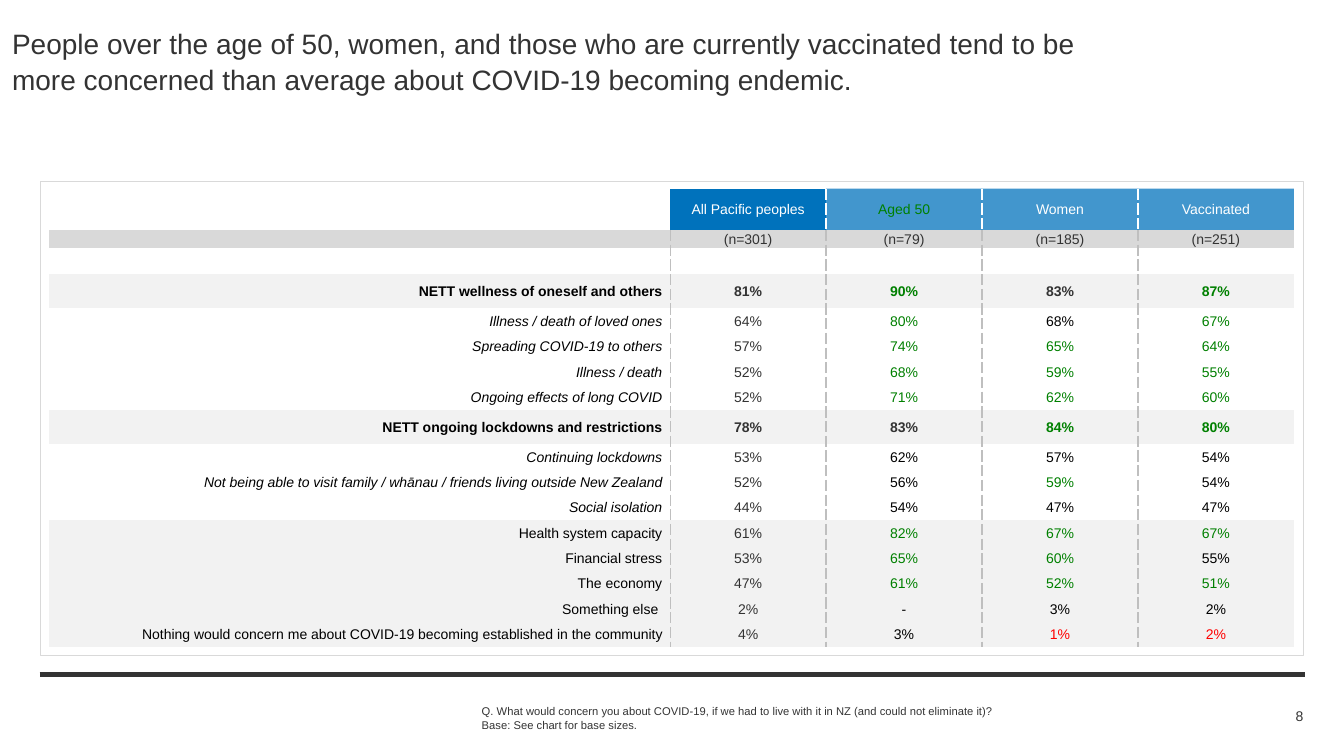
import lxml.etree
import pptx
import pptx.dml.color
import pptx.enum.shapes
import pptx.enum.text
import pptx.oxml.ns
import pptx.util

Pt = pptx.util.Pt
qn = pptx.oxml.ns.qn
ALIGN = pptx.enum.text.PP_ALIGN
ANCHOR = pptx.enum.text.MSO_ANCHOR

TITLE = ("People over the age of 50, women, and those who are currently vaccinated "
         "tend to be more concerned than average about COVID-19 becoming endemic.")
NOTES = [
    "Q. What would concern you about COVID-19, if we had to live with it in NZ (and could not eliminate it)?",
    "Base: See chart for base sizes.",
]
PAGE = "8"
DARK, BLACK, WHITE = "333333", "000000", "FFFFFF"
BLUE, GREY, PALE, DASH = "0072BC", "D9D9D9", "F2F2F2", "BFBFBF"
SIGNALS = {"+": "008000", "!": "FF0000"}

ROWS = [
    ("head", "", "All Pacific peoples", "Aged 50+", "Women", "Vaccinated"),
    ("base", "", "(n=301)", "(n=79)", "(n=185)", "(n=251)"),
    ("gap", "", "", "", "", ""),
    ("nett", "NETT wellness of oneself and others", "81%", "90%+", "83%", "87%+"),
    ("part", "Illness / death of loved ones", "64%", "80%+", "68%", "67%+"),
    ("part", "Spreading COVID-19 to others", "57%", "74%+", "65%+", "64%+"),
    ("part", "Illness / death", "52%", "68%+", "59%+", "55%+"),
    ("part", "Ongoing effects of long COVID", "52%", "71%+", "62%+", "60%+"),
    ("nett", "NETT ongoing lockdowns and restrictions", "78%", "83%", "84%+", "80%+"),
    ("part", "Continuing lockdowns", "53%", "62%", "57%", "54%"),
    ("part", "Not being able to visit family / whānau / friends living outside New Zealand",
     "52%", "56%", "59%+", "54%"),
    ("part", "Social isolation", "44%", "54%", "47%", "47%"),
    ("single", "Health system capacity", "61%", "82%+", "67%+", "67%+"),
    ("single", "Financial stress", "53%", "65%+", "60%+", "55%"),
    ("single", "The economy", "47%", "61%+", "52%+", "51%+"),
    ("single", "Something else ", "2%", "-", "3%", "2%"),
    ("single", "Nothing would concern me about COVID-19 becoming established in the community",
     "4%", "3%", "1%!", "2%!"),
]
HEIGHTS = {"head": 29.5, "base": 13, "gap": 18.5, "nett": 24.6, "part": 18.1, "single": 18.1}
FILLS = {"head": BLUE, "base": GREY, "nett": PALE, "single": PALE}
WIDTHS = [443.5] + [111.4] * 4


def rgb(value):
    return pptx.dml.color.RGBColor.from_string(value)


def style(p, size, color, align=ALIGN.LEFT, bold=False, italic=False):
    p.alignment = align
    for r in p.runs:
        r.font.name = "Arial"
        r.font.size = Pt(size)
        r.font.bold = bold
        r.font.italic = italic
        r.font.color.rgb = rgb(color)


def text_box(s, x, y, w, h):
    tf = s.shapes.add_textbox(Pt(x), Pt(y), Pt(w), Pt(h)).text_frame
    tf.word_wrap = True
    return tf


def no_margins(tf):
    tf.margin_left = tf.margin_right = tf.margin_top = tf.margin_bottom = 0


def border(cell, tag, color):
    ln = lxml.etree.SubElement(cell._tc.get_or_add_tcPr(), qn("a:" + tag), w=str(Pt(1)))
    fill = lxml.etree.SubElement(ln, qn("a:solidFill"))
    lxml.etree.SubElement(fill, qn("a:srgbClr"), val=color)
    lxml.etree.SubElement(ln, qn("a:prstDash"), val="dash")


def edge_color(kind, edge):
    if edge in (0, len(WIDTHS)) or (kind == "head" and edge == 1):
        return None
    return WHITE if kind == "head" else DASH


def text_color(kind, col, mark):
    if mark:
        return SIGNALS[mark]
    if kind == "head":
        return WHITE
    if col and (col == 1 or kind in ("base", "nett")):
        return DARK
    return BLACK


def fill_cell(cell, kind, col, text):
    for tag, edge in (("lnL", col), ("lnR", col + 1)):
        color = edge_color(kind, edge)
        if color:
            border(cell, tag, color)
    if kind in FILLS and not (kind == "head" and col == 0):
        cell.fill.solid()
        cell.fill.fore_color.rgb = rgb(FILLS[kind])
        if kind == "head" and col > 1:
            clr = cell._tc.tcPr.find(".//" + qn("a:solidFill") + "[last()]/" + qn("a:srgbClr"))
            clr = cell._tc.tcPr.find(qn("a:solidFill")).find(qn("a:srgbClr"))
            lxml.etree.SubElement(clr, qn("a:alpha"), val="74000")
    else:
        cell.fill.background()
    cell.vertical_anchor = ANCHOR.MIDDLE
    cell.margin_left = Pt(5.76 if kind == "head" else 0.72)
    cell.margin_right = Pt(5.76 if kind == "head" or col == 0 else 0.72)
    cell.margin_top, cell.margin_bottom = Pt(0.72), 0
    p = cell.text_frame.paragraphs[0]
    if not text:
        lxml.etree.SubElement(p._p, qn("a:endParaRPr"), sz="1000")
        return
    mark = text[-1] if text[-1] in SIGNALS and col else ""
    p.text = text.rstrip(mark) if mark else text
    style(p, 10, text_color(kind, col, mark), ALIGN.CENTER if col else ALIGN.RIGHT,
          kind == "nett", kind == "part" and col == 0)


def add_concerns(s):
    frame = s.shapes.add_table(len(ROWS), len(WIDTHS), Pt(35.2), Pt(134.8),
                               Pt(sum(WIDTHS)), Pt(sum(HEIGHTS[row[0]] for row in ROWS)))
    tbl = frame.table
    tbl.first_row = tbl.horz_banding = False
    tbl._tbl.tblPr.find(qn("a:tableStyleId")).text = "{2D5ABB26-0587-4C30-8999-92F81FD0307C}"
    for column, width in zip(tbl.columns, WIDTHS):
        column.width = Pt(width)
    for i, (kind, *texts) in enumerate(ROWS):
        tbl.rows[i].height = Pt(HEIGHTS[kind])
        for col, text in enumerate(texts):
            fill_cell(tbl.cell(i, col), kind, col, text)


def main():
    prs = pptx.Presentation()
    prs.slide_width, prs.slide_height = Pt(960), Pt(540)
    s = prs.slides.add_slide(prs.slide_layouts[5])

    rule = s.shapes.add_connector(pptx.enum.shapes.MSO_CONNECTOR.STRAIGHT,
                                  Pt(28.4), Pt(481.8), Pt(932), Pt(481.8))
    rule.line.color.rgb = rgb(DARK)
    rule.line.width = Pt(3)
    lxml.etree.SubElement(rule._element.spPr, qn("a:effectLst"))

    panel = s.shapes.add_shape(pptx.enum.shapes.MSO_SHAPE.RECTANGLE,
                               Pt(28.8), Pt(129.6), Pt(902.2), Pt(338.4))
    panel.shadow.inherit = False
    panel.fill.background()
    panel.line.color.rgb = rgb(GREY)
    panel.line.width = Pt(0.75)

    title = s.shapes.title
    title.left, title.top, title.width, title.height = Pt(8.6), Pt(18), Pt(802.8), Pt(31.7)
    tf = title.text_frame
    tf.text = TITLE
    tf.word_wrap = True
    tf.auto_size = pptx.enum.text.MSO_AUTO_SIZE.NONE
    tf.vertical_anchor = ANCHOR.TOP
    no_margins(tf)
    tf.paragraphs[0].line_spacing = 1.05
    style(tf.paragraphs[0], 20, DARK)

    tf = text_box(s, 337, 499.7, 538.6, 26.6)
    tf.text = "\n".join(NOTES)
    for p in tf.paragraphs:
        style(p, 8, DARK)

    add_concerns(s)

    tf = text_box(s, 854.6, 503.3, 76.3, 15.8)
    tf.text = PAGE
    tf.vertical_anchor = ANCHOR.MIDDLE
    no_margins(tf)
    style(tf.paragraphs[0], 10, DARK, ALIGN.RIGHT)

    prs.save("out.pptx")


if __name__ == "__main__":
    main()
